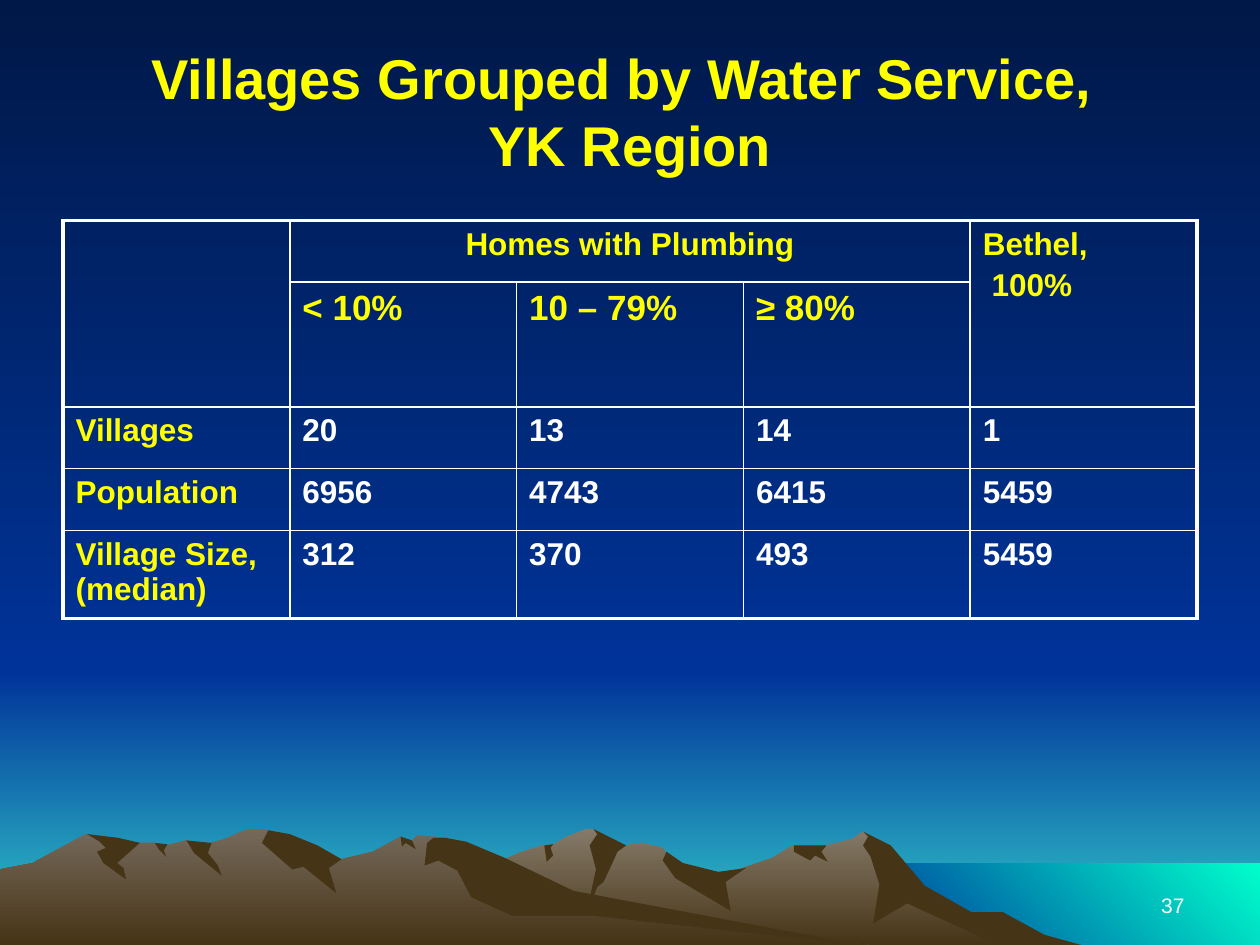
from dataclasses import dataclass

from lxml import etree
from pptx import Presentation, util as u
from pptx.dml.color import RGBColor
from pptx.enum import text
from pptx.oxml.ns import qn


@dataclass(frozen=True)
class Theme:
    font: str = "Arial"
    sky: tuple = ("001847", "003399")
    horizon: tuple = ("003399", "33CCCC")
    sea: tuple = ("003399", "00FFCC")
    front_rock: tuple = ("857A69", "463416")
    back_rock: tuple = ("75695A", "463416")
    shadow: tuple = ("463416",)
    label: str = "FFFF00"
    value: str = "FFFFFF"
    title_size: int = 32
    range_size: int = 20
    cell_size: int = 18
    number_size: int = 12
    outer_line: float = 2.25
    inner_line: float = 1


theme = Theme()
WIDTH, HEIGHT = 10, 7.5
HORIZON_TOP, SEA_TOP, SEA_LEFT = 5.33, 6.85, 6.83
DOWN, UP_RIGHT = 270, 45
LEFT, CENTER, RIGHT = text.PP_ALIGN.LEFT, text.PP_ALIGN.CENTER, text.PP_ALIGN.RIGHT


def paint(fill, colors, angle=DOWN):
    if len(colors) == 1:
        fill.solid()
        fill.fore_color.rgb = RGBColor.from_string(colors[0])
        return
    fill.gradient()
    fill.gradient_angle = angle
    for stop, position, color in zip(fill.gradient_stops, (0, 1), colors):
        stop.position = position
        stop.color.rgb = RGBColor.from_string(color)


def write(paragraph, size, color, bold=True, align=LEFT):
    paragraph.alignment = align
    formats = {"name": theme.font, "size": u.Pt(size), "bold": bold}
    for run in paragraph.runs:
        for key, value in formats.items():
            setattr(run.font, key, value)
        run.font.color.rgb = RGBColor.from_string(color)


prs = Presentation()
prs.slide_width, prs.slide_height = u.Inches(WIDTH), u.Inches(HEIGHT)
slide = prs.slides.add_slide(prs.slide_layouts[5])
paint(slide.background.fill, theme.sky)

bands = [
    (theme.horizon, DOWN, (0, HORIZON_TOP, WIDTH, HEIGHT)),
    (theme.sky, DOWN, (0, 0, WIDTH, HORIZON_TOP)),
    (theme.sea, UP_RIGHT, (SEA_LEFT, SEA_TOP, WIDTH, HEIGHT)),
]

front_skyline = [
    (2.58, HEIGHT), (2.77, 7.39), (3.27, 7.09), (3.55, 6.98), (3.94, 6.85), (4.12, 6.77),
    (4.3, 6.71), (4.38, 6.71), (4.5, 6.64), (4.65, 6.58), (4.71, 6.58), (4.86, 6.73),
    (5.09, 6.69), (5.26, 6.73), (5.36, 6.9), (5.66, 6.97), (6.13, 6.81), (6.29, 6.71),
    (6.56, 6.71), (6.76, 6.66), (6.85, 6.6), (7.02, 6.71), (7.23, 6.98), (7.64, 7.23),
    (7.78, 7.27), (8.02, 7.4), (8.21, HEIGHT),
]
back_skyline = [
    (0, HEIGHT), (0, 6.9), (0.26, 6.85), (0.46, 6.74), (0.68, 6.62), (0.94, 6.71),
    (1.11, 6.69), (1.23, 6.69), (1.32, 6.71), (1.48, 6.67), (1.6, 6.71), (1.78, 6.66),
    (1.96, 6.58), (2.12, 6.58), (2.23, 6.63), (2.36, 6.81), (2.6, 6.76), (2.71, 6.82),
    (2.96, 6.76), (3.18, 6.64), (3.27, 6.68), (3.31, 6.63), (3.54, 6.65), (4.32, 7.12),
    (6.67, 7.48), (6.9, HEIGHT),
]
front_shadows = {
    "east slope": [(6.85, 6.6), (7.07, 6.71), (7.34, 7.03), (7.71, 7.24), (7.96, 7.24),
                   (8.29, 7.42), (8.58, HEIGHT), (7.92, HEIGHT), (7.2, 7.17), (6.93, 7.33),
                   (6.98, 7.02), (6.91, 6.8), (6.85, 6.71), (6.89, 6.64)],
    "middle peak": [(4.71, 6.58), (4.97, 6.71), (4.9, 6.76), (4.87, 6.83), (4.79, 7),
                    (4.74, 7.04), (4.65, 7.27), (4.73, 6.9), (4.68, 6.71), (4.74, 6.62)],
    "middle slope": [(5.29, 6.76), (5.42, 6.85), (5.7, 6.92), (5.92, 6.89), (5.76, 7),
                     (5.8, 7.23), (5.36, 6.97), (5.26, 6.83)],
    "east notch": [(6.3, 6.71), (6.56, 6.71), (6.52, 6.76), (6.57, 6.84), (6.47, 6.79),
                   (6.43, 6.83), (6.3, 6.76)],
    "middle notch": [(4.32, 6.71), (4.39, 6.7), (4.37, 6.73), (4.39, 6.79), (4.34, 6.84)],
}
back_shadows = {
    "west peak": [(2.13, 6.59), (2.3, 6.62), (2.52, 6.71), (2.71, 6.82), (2.61, 6.89),
                  (2.67, 7.09), (2.41, 6.88), (2.32, 6.9), (2.08, 6.69)],
    "long slope": [(3.44, 6.65), (3.54, 6.65), (3.7, 6.68), (4.01, 6.81), (4.55, 7.07),
                   (6.83, HEIGHT), (4.72, 7.27), (4.07, 7.27), (3.74, 7.12), (3.63, 6.91),
                   (3.48, 6.83), (3.37, 6.87), (3.39, 6.69)],
    "centre notch": [(3.18, 6.64), (3.27, 6.67), (3.3, 6.74), (3.22, 6.69), (3.19, 6.72)],
    "west saddle": [(1.48, 6.67), (1.68, 6.69), (1.65, 6.77), (1.73, 6.87), (1.76, 6.95),
                    (1.54, 6.77)],
    "west notch": [(1.23, 6.69), (1.33, 6.7), (1.3, 6.75), (1.32, 6.8), (1.26, 6.74)],
    "west slope": [(0.69, 6.62), (0.94, 6.65), (1.11, 6.69), (0.93, 6.85), (0.98, 6.89),
                   (1, 6.98), (0.82, 6.85), (0.77, 6.76), (0.84, 6.73), (0.79, 6.68)],
}

landscape = [(colors, angle, [(left, top), (right, top), (right, bottom), (left, bottom)])
             for colors, angle, (left, top, right, bottom) in bands]
for rock, skyline, shadows in [(theme.front_rock, front_skyline, front_shadows),
                               (theme.back_rock, back_skyline, back_shadows)]:
    landscape.append((rock, DOWN, skyline))
    landscape += [(theme.shadow, DOWN, outline) for outline in shadows.values()]

for colors, angle, outline in landscape:
    start, *corners = [(u.Inches(x), u.Inches(y)) for x, y in outline]
    builder = slide.shapes.build_freeform(*start)
    builder.add_line_segments(corners, close=True)
    terrain = builder.convert_to_shape()
    terrain.shadow.inherit = False
    terrain.line.fill.background()
    paint(terrain.fill, colors, angle)

page_number = slide.shapes.add_textbox(u.Inches(7.17), u.Inches(6.83), u.Inches(2.33), u.Inches(0.5))
number_format = {"word_wrap": True, "vertical_anchor": text.MSO_ANCHOR.BOTTOM, "text": "37"}
for key, value in number_format.items():
    setattr(page_number.text_frame, key, value)
write(page_number.text_frame.paragraphs[0], theme.number_size, theme.value, bold=False, align=RIGHT)

title = slide.shapes.title
title_place = {"left": 0.5, "top": 0.25, "width": 9, "height": 1.25}
for key, value in title_place.items():
    setattr(title, key, u.Inches(value))
title_format = {"auto_size": text.MSO_AUTO_SIZE.NONE, "word_wrap": True,
                "vertical_anchor": text.MSO_ANCHOR.MIDDLE,
                "text": "Villages Grouped by Water Service, \vYK Region"}
for key, value in title_format.items():
    setattr(title.text_frame, key, value)
write(title.text_frame.paragraphs[0], theme.title_size, theme.label, align=CENTER)
title.element.getparent().append(title.element)

services = [
    ["", "Homes with Plumbing", "", "", "Bethel,\n 100%"],
    ["", "< 10%", "10 – 79%", "≥ 80%", ""],
    ["Villages", "20", "13", "14", "1"],
    ["Population", "6956", "4743", "6415", "5459"],
    ["Village Size, (median)", "312", "370", "493", "5459"],
]
row_heights = [0.49, 0.99, 0.49, 0.49, 0.7]
GROUP_ROW, RANGE_ROW = 0, 1
last_row, last_col = len(services) - 1, len(services[0]) - 1
corner, plumbing, bethel = (0, 0), (GROUP_ROW, 1), (GROUP_ROW, last_col)

table = slide.shapes.add_table(len(services), len(services[0]), u.Inches(0.5), u.Inches(1.75),
                               u.Inches(9), u.Inches(sum(row_heights))).table
table.first_row = table.horz_banding = False
for row, height in zip(table.rows, row_heights):
    row.height = u.Inches(height)
spans = {corner: (RANGE_ROW, 0), plumbing: (GROUP_ROW, last_col - 1), bethel: (RANGE_ROW, last_col)}
for start, end in spans.items():
    table.cell(*start).merge(table.cell(*end))

for r, values in enumerate(services):
    for c, value in enumerate(values):
        cell = table.cell(r, c)
        if cell.is_spanned:
            continue
        cell.text = value
        size = theme.range_size if r == RANGE_ROW else theme.cell_size
        color = theme.label if r <= RANGE_ROW or c == 0 else theme.value
        align = CENTER if (r, c) == plumbing else LEFT
        for i, paragraph in enumerate(cell.text_frame.paragraphs):
            write(paragraph, size, color, align=align)
            if i:
                paragraph.space_before = u.Pt(3.6)
        properties = cell._tc.get_or_add_tcPr()
        edges = {"a:lnL": c == 0, "a:lnR": c == last_col, "a:lnT": r == 0, "a:lnB": r == last_row}
        for tag, is_outer in edges.items():
            width = u.Pt(theme.outer_line if is_outer else theme.inner_line)
            border = etree.SubElement(properties, qn(tag), w=str(int(width)))
            ink = etree.SubElement(border, qn("a:solidFill"))
            etree.SubElement(ink, qn("a:srgbClr"), val=theme.value)
        cell.fill.background()

prs.save("out.pptx")
